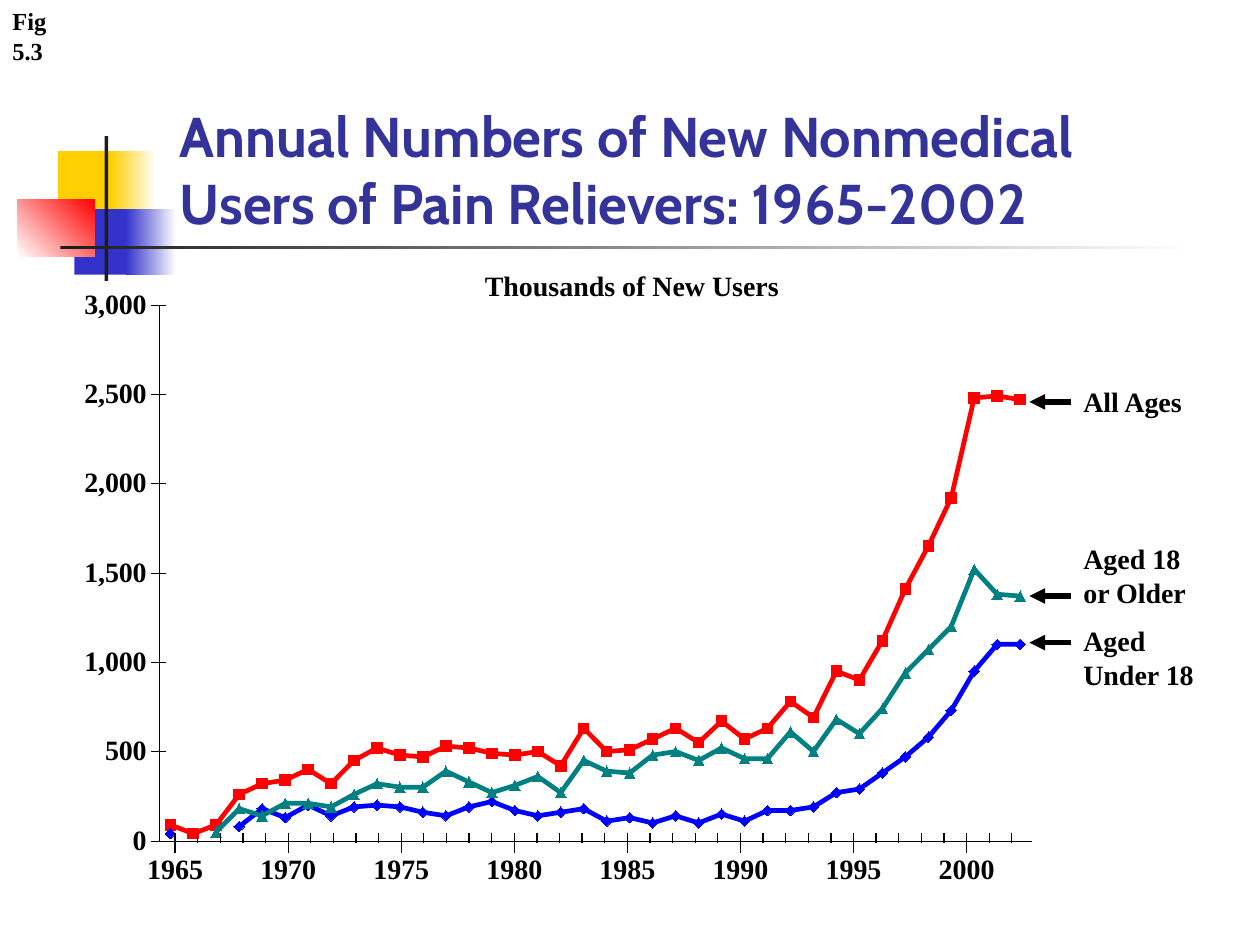
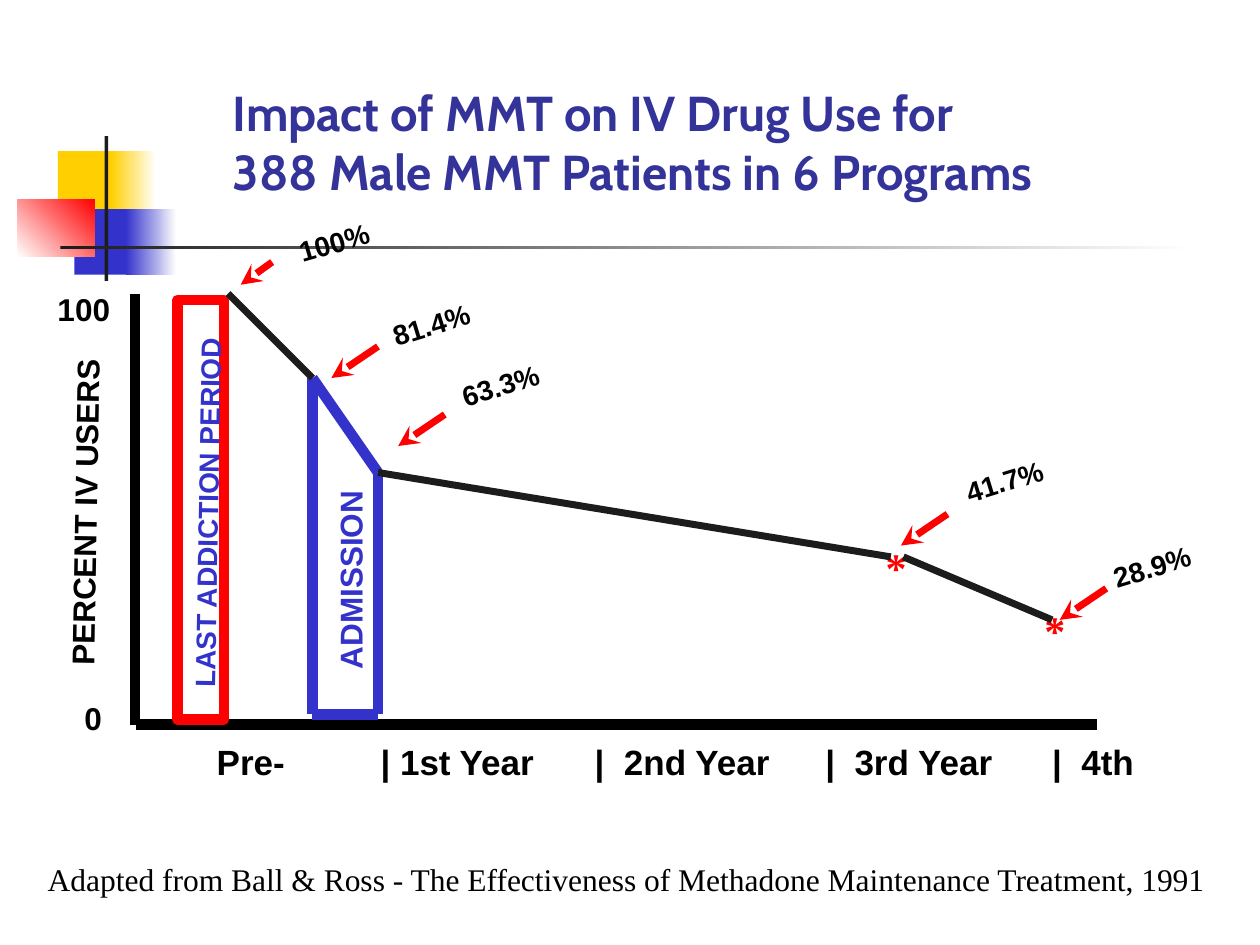
from collections import namedtuple
from itertools import pairwise

from lxml import etree
from pptx import Presentation
from pptx.chart.data import CategoryChartData
from pptx.dml.color import RGBColor
from pptx.enum.chart import XL_CHART_TYPE, XL_MARKER_STYLE, XL_TICK_LABEL_POSITION, XL_TICK_MARK
from pptx.enum.shapes import MSO_CONNECTOR, MSO_SHAPE
from pptx.enum.text import MSO_ANCHOR, PP_ALIGN
from pptx.oxml import parse_xml
from pptx.oxml.ns import nsdecls, qn
from pptx.util import Inches, Pt

RECTANGLE = MSO_SHAPE.RECTANGLE
STRAIGHT = MSO_CONNECTOR.STRAIGHT
LEFT, CENTER = PP_ALIGN.LEFT, PP_ALIGN.CENTER
TOP, MIDDLE, BOTTOM = MSO_ANCHOR.TOP, MSO_ANCHOR.MIDDLE, MSO_ANCHOR.BOTTOM
SQUARE, DIAMOND, TRIANGLE = (
    XL_MARKER_STYLE.SQUARE, XL_MARKER_STYLE.DIAMOND, XL_MARKER_STYLE.TRIANGLE)
NO_TICK, CROSS_TICK = XL_TICK_MARK.NONE, XL_TICK_MARK.CROSS

Style = namedtuple("Style", "font size color bold", defaults=("000000", True))


class Theme:
    black, white, ink = "000000", "FFFFFF", "1C1C1C"
    red, blue, yellow, title = "FF0000", "3333CC", "FFCF01", "333399"
    series_blue, teal = "0000FF", "008080"
    serif, sans, heading = "Times New Roman", "Arial", "Cabin"

    trend_title = Style(heading, 32, title)
    impact_title = Style(heading, 28, title)
    figure = Style(serif, 14)
    label = Style(serif, 16)
    axis = Style(sans, 18)
    years = Style(sans, 20)
    percent = Style(sans, 16)
    addiction = Style(sans, 16, blue)
    admission = Style(sans, 18, blue)
    star = Style(serif, 24, red)
    credit = Style(serif, 18, black, False)


# Content shared by both slides: box, start colour, end colour, angle
MOTIF = [
    ((0.46, 1.2, 0.48, 0.52), Theme.yellow, None, 0),
    ((0.88, 1.2, 0.36, 0.52), Theme.yellow, Theme.white, 0),
    ((0.59, 1.66, 0.46, 0.52), Theme.blue, None, 0),
    ((1, 1.66, 0.4, 0.52), Theme.blue, Theme.white, 0),
    ((0.14, 1.58, 0.61, 0.46), Theme.white, Theme.red, 45),
    ((0.83, 1.08, 0.03, 1.15), Theme.ink, None, 0),
    ((0.48, 1.95, 9, 0.03), Theme.ink, Theme.white, 0),
]

# Content of the trend slide
TREND_TITLE = "Annual Numbers of New Nonmedical Users of Pain Relievers: 1965-2002"
FIRST_YEAR, LAST_YEAR, LABEL_EVERY = 1965, 2002, 5
TREND_SERIES = [
    ("All Ages", Theme.red, SQUARE, [
        90, 40, 90, 260, 320, 340, 400, 320, 450, 520, 480, 470, 530, 520, 490, 480, 500, 420, 630,
        500, 510, 570, 630, 550, 670, 570, 630, 780, 690, 950, 900, 1120, 1410, 1650, 1920, 2480,
        2490, 2470]),
    ("Aged Under 18", Theme.series_blue, DIAMOND, [
        40, None, None, 80, 180, 130, 200, 140, 190, 200, 190, 160, 140, 190, 220, 170, 140, 160,
        180, 110, 130, 100, 140, 100, 150, 110, 170, 170, 190, 270, 290, 380, 470, 580, 730, 950,
        1100, 1100]),
    ("Aged 18 or Older", Theme.teal, TRIANGLE, [
        None, None, 50, 180, 140, 210, 210, 190, 260, 320, 300, 300, 390, 330, 270, 310, 360, 270,
        450, 390, 380, 480, 500, 450, 520, 460, 460, 610, 500, 680, 600, 740, 940, 1070, 1200,
        1520, 1380, 1370]),
]
# Label, top of its box, height of its arrow
TREND_CALLOUTS = [
    ("All Ages", 3, 3.19),
    ("Aged Under 18", 4.9, 5.1),
    ("Aged 18 or Older", 4.25, 4.73),
]

# Content of the impact slide
IMPACT_TITLE = "Impact of MMT on IV Drug Use for\v388 Male MMT Patients in 6 Programs"
CREDIT = "Adapted from Ball & Ross - The Effectiveness of Methadone Maintenance Treatment, 1991"
PERIODS = ["Pre-", "| 1st Year", "|  2nd Year", "|  3rd Year", "|  4th"]
PERIOD_STOPS = [1.3, 3, 4.83, 6.63]
# Percent, label corner, rotation, arrow tip, arrow reach
PERCENTS = [
    ("100%", (2.26, 1.67), 344, (1.91, 2.26), (0.25, 0.18)),
    ("81.4%", (3, 2.33), 343, (2.63, 3), (0.37, 0.25)),
    ("63.3%", (3.55, 2.81), 343, (3.16, 3.54), (0.37, 0.25)),
    ("41.7%", (7.55, 3.57), 343, (7.15, 4.33), (0.37, 0.25)),
    ("28.9%", (8.72, 4.25), 343, (8.41, 4.92), (0.37, 0.25)),
]
AXIS_LINES = [((1.07, 2.33), (1.07, 5.75)), ((1.08, 5.75), (8.71, 5.75))]
ADMISSION_OUTLINE = [(2.48, 3), (2.48, 5.67), (3, 5.67), (3, 3.75), (2.48, 3)]
DECLINE = [((1.81, 2.33), (2.48, 3)), ((3, 3.75), (7.07, 4.42)), ((7.17, 4.42), (8.35, 4.92))]
STARS = [(6.93, 4.25), (8.19, 4.75)]


def rgb(color):
    return RGBColor.from_string(color)


def inches(values):
    return [Inches(value) for value in values]


def set_font(font, style):
    font.name, font.size, font.bold = style.font, Pt(style.size), style.bold
    font.color.rgb = rgb(style.color)


def add_text(page, text, box, style, rotation=0, align=LEFT, anchor=TOP,
             insets=(0.1, 0.05, 0.1, 0.05), wrap=True):
    shape = page.shapes.add_textbox(*inches(box))
    shape.rotation = rotation
    frame = shape.text_frame
    frame.word_wrap, frame.vertical_anchor = wrap, anchor
    (frame.margin_left, frame.margin_top,
     frame.margin_right, frame.margin_bottom) = inches(insets)
    frame.text = text
    for para in frame.paragraphs:
        para.alignment = align
        set_font(para.font, style)
    return shape


def add_line(page, start, end, color, width, arrowhead=None):
    line = page.shapes.add_connector(STRAIGHT, *inches(start + end))
    line.line.color.rgb = rgb(color)
    line.line.width = Pt(width)
    if arrowhead:
        etree.SubElement(line.line._get_or_add_ln(), qn("a:tailEnd"), type=arrowhead)
    etree.SubElement(line._element.spPr, qn("a:effectLst"))


def add_rectangle(page, box):
    shape = page.shapes.add_shape(RECTANGLE, *inches(box))
    shape.shadow.inherit = False
    return shape


def add_page(deck):
    """Add a blank page that carries the shared motif."""
    page = deck.slides.add_slide(deck.slide_layouts[6])
    for box, start, end, angle in MOTIF:
        shape = add_rectangle(page, box)
        shape.line.fill.background()
        if end:
            shape.fill.gradient()
            shape.fill.gradient_angle = angle
            for stop, color in zip(shape.fill.gradient_stops, (start, end)):
                stop.color.rgb = rgb(color)
        else:
            shape.fill.solid()
            shape.fill.fore_color.rgb = rgb(start)
    return page


def add_trend_chart(page):
    data = CategoryChartData(number_format="#,##0")
    data.categories = [str(year) for year in range(FIRST_YEAR, LAST_YEAR + 1)]
    for name, _, _, values in TREND_SERIES:
        data.add_series(name, values)
    chart = page.shapes.add_chart(
        XL_CHART_TYPE.LINE_MARKERS, *inches((0.55, 2.22, 7.64, 4.66)), data).chart
    chart.has_legend = chart.has_title = False
    set_font(chart.font, Theme.label)

    # Axes
    years, users = chart.category_axis, chart.value_axis
    years.tick_label_position = XL_TICK_LABEL_POSITION.NONE
    users.minimum_scale, users.maximum_scale, users.major_unit = 0, 3000, 500
    users.tick_labels.number_format = "#,##0"
    users.tick_labels.number_format_is_linked = False
    set_font(users.tick_labels.font, Theme.label)
    for axis, tick in ((years, NO_TICK), (users, CROSS_TICK)):
        axis.has_major_gridlines = False
        axis.major_tick_mark, axis.minor_tick_mark = tick, NO_TICK
        axis.format.line.color.rgb = rgb(Theme.black)
        axis.format.line.width = Pt(0.34)

    # Series
    for series, (_, color, symbol, _) in zip(chart.plots[0].series, TREND_SERIES):
        series.smooth = False
        series.format.line.color.rgb = rgb(color)
        series.format.line.width = Pt(2.69)
        series.marker.style, series.marker.size = symbol, 6
        series.marker.format.fill.solid()
        series.marker.format.fill.fore_color.rgb = rgb(color)
        series.marker.format.line.color.rgb = rgb(color)

    # Fixed inner plot area
    area = chart._chartSpace.chart.plotArea
    for layout in area.findall(qn("c:layout")):
        area.remove(layout)
    place = "".join(f'<c:{key} val="{value}"/>' for key, value in (
        ("layoutTarget", "inner"), ("xMode", "edge"), ("yMode", "edge"),
        ("x", 0.093), ("y", 0.043), ("w", 0.907), ("h", 0.913)))
    area.insert(0, parse_xml(
        f'<c:layout {nsdecls("c")}><c:manualLayout>{place}</c:manualLayout></c:layout>'))


def build_trend_page(deck):
    page = add_page(deck)
    add_text(page, TREND_TITLE, (1.33, 0.58, 8.33, 1.34), Theme.trend_title, anchor=BOTTOM)
    add_text(page, "Fig\n5.3", (0, 0, 0.47, 0.57), Theme.figure, wrap=False)
    add_trend_chart(page)

    # Year ruler: long ticks and labels every five years
    ruler_left, ruler_top, year_step, label_width = 1.39, 6.61, 0.18, 0.89
    year_step = (8.03 - ruler_left) / (LAST_YEAR - FIRST_YEAR)
    for index in range(LAST_YEAR - FIRST_YEAR + 1):
        x = ruler_left + index * year_step
        labelled = index % LABEL_EVERY == 0
        tick = 0.16 if labelled else 0.08
        add_line(page, (x, ruler_top), (x, ruler_top + tick), Theme.black, 0.75)
        if labelled:
            add_text(page, str(FIRST_YEAR + index),
                     (x - label_width / 2, 6.76, label_width, 0.27),
                     Theme.label, align=CENTER, insets=(0, 0, 0, 0))

    # Series callouts
    for label, top, arrow_y in TREND_CALLOUTS:
        add_text(page, label, (8.5, top, 1.16, 0.64), Theme.label)
        add_line(page, (8.5, arrow_y), (8.17, arrow_y), Theme.black, 3, "triangle")
    add_text(page, "Thousands of New Users", (3.75, 2.08, 3, 0.37), Theme.label)


def build_impact_page(deck):
    page = add_page(deck)
    add_text(page, IMPACT_TITLE, (1.75, 0.5, 8.25, 1.25), Theme.impact_title, anchor=MIDDLE)

    # Axes and their labels
    for start, end in AXIS_LINES:
        add_line(page, start, end, Theme.black, 6)
    add_text(page, "PERCENT IV USERS", (-0.87, 3.92, 3.08, 0.4), Theme.axis, 271,
             insets=(0.38, 0.05, 0.1, 0.05))
    add_text(page, "0", (0.48, 5.5, 0.52, 0.4), Theme.axis, align=CENTER)
    add_text(page, "100", (0.33, 2.25, 0.67, 0.4), Theme.axis, align=CENTER)
    periods = add_text(page, "\t".join(PERIODS), (1.08, 5.83, 8.58, 0.43), Theme.years,
                       insets=(0.64, 0.05, 0.1, 0.05))
    stops = "".join(f'<a:tab pos="{Inches(stop)}" algn="l"/>' for stop in PERIOD_STOPS)
    properties = periods.text_frame.paragraphs[0]._p.get_or_add_pPr()
    properties.insert(0, parse_xml(f'<a:tabLst {nsdecls("a")}>{stops}</a:tabLst>'))

    # Addiction and admission columns
    addiction = add_rectangle(page, (1.41, 2.38, 0.37, 3.33))
    addiction.fill.background()
    addiction.line.color.rgb = rgb(Theme.red)
    addiction.line.width = Pt(6)
    add_text(page, "LAST ADDICTION PERIOD", (-0.06, 3.66, 3.42, 0.37), Theme.addiction, 271)
    for start, end in pairwise(ADMISSION_OUTLINE):
        add_line(page, start, end, Theme.blue, 6)
    add_text(page, "ADMISSION", (1.53, 3.96, 2.5, 0.4), Theme.admission, 270)

    # Declining curve with its percentages
    for corner in STARS:
        add_text(page, "*", corner + (0.59, 0.5), Theme.star)
    for start, end in DECLINE:
        add_line(page, start, end, Theme.ink, 4)
    for percent, corner, rotation, (x, y), (reach, rise) in PERCENTS:
        add_text(page, percent, corner + (1.26, 0.37), Theme.percent, rotation)
        add_line(page, (x + reach, y - rise), (x, y), Theme.red, 4, "stealth")

    add_text(page, CREDIT, (0.28, 6.78, 9.72, 0.4), Theme.credit)


def main():
    deck = Presentation()
    deck.slide_width, deck.slide_height = Inches(10), Inches(7.5)
    build_trend_page(deck)
    build_impact_page(deck)
    deck.save("out.pptx")


if __name__ == "__main__":
    main()
